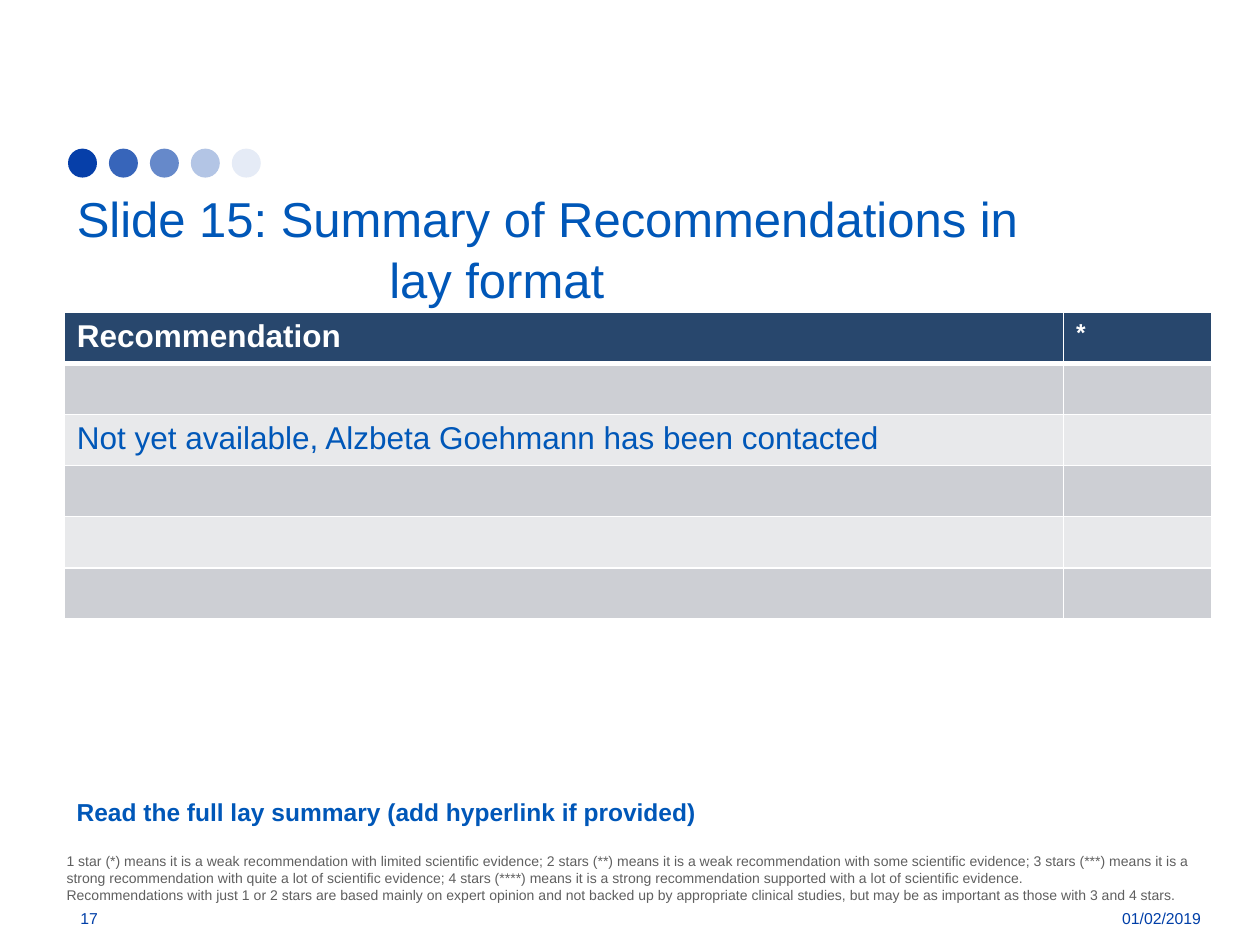
from dataclasses import dataclass

import lxml.etree
import pptx
import pptx.dml.color
import pptx.enum.shapes
import pptx.enum.text
import pptx.oxml.ns
import pptx.util

RGBColor = pptx.dml.color.RGBColor
Align = pptx.enum.text.PP_ALIGN
Anchor = pptx.enum.text.MSO_ANCHOR
qn = pptx.oxml.ns.qn

WHITE = RGBColor(0xFF, 0xFF, 0xFF)
BLUE = RGBColor(0x00, 0x57, 0xB8)
DEEP_BLUE = RGBColor(0x00, 0x3F, 0xA8)
DOT_BLUE = RGBColor(0x06, 0x3F, 0xA9)
NAVY = RGBColor(0x28, 0x47, 0x6D)
GREY = RGBColor(0x5F, 0x5F, 0x5F)
BANDS = (RGBColor(0xE8, 0xE9, 0xEB), RGBColor(0xCD, 0xCF, 0xD4))
FONT = "Arial"
UNIT = pptx.util.Inches(0.1)


@dataclass
class Label:
    box: tuple
    text: str
    size: int
    color: RGBColor
    bold: bool = False
    align: Align = Align.LEFT
    anchor: Anchor = Anchor.TOP


LABELS = (
    Label((5.4, 70.9, 9.6, 4), "17", 9, DEEP_BLUE, anchor=Anchor.MIDDLE),
    Label((82.9, 70.9, 13.4, 4), "01/02/2019", 9, DEEP_BLUE,
          align=Align.RIGHT, anchor=Anchor.MIDDLE),
    Label((4.3, 67.2, 91.4, 5),
          "1 star (*) means it is a weak recommendation with limited scientific evidence; "
          "2 stars (**) means it is a weak recommendation with some scientific evidence; "
          "3 stars (***) means it is a strong recommendation with quite a lot of scientific evidence; "
          "4 stars (****) means it is a strong recommendation supported with a lot of scientific evidence.\n"
          "Recommendations with just 1 or 2 stars are based mainly on expert opinion and not backed up "
          "by appropriate clinical studies, but may be as important as those with 3 and 4 stars.",
          8, GREY),
    Label((5.1, 62.8, 57.3, 3.4),
          "Read the full lay summary (add hyperlink if provided)", 14, BLUE, bold=True),
)
DOT_OPACITIES = (100, 80, 61, 30, 10)
COLUMNS = (79.3, 11.8)
ROWS = (("Recommendation", "*"), ("", ""),
        ("Not yet available, Alzbeta Goehmann has been contacted", ""),
        ("", ""), ("", ""), ("", ""))


def grid(*units: float) -> list:
    return [int(u * UNIT) for u in units]


def style(p, size: float, color: RGBColor, bold: bool = False) -> None:
    for r in p.runs:
        r.font.name = FONT
        r.font.size = pptx.util.Pt(size)
        r.font.bold = bold
        r.font.color.rgb = color


def add_dot(s, index: int, opacity: int) -> None:
    sp = s.shapes.add_shape(pptx.enum.shapes.MSO_SHAPE.OVAL,
                            *grid(5.4 + 3.25 * index, 11.8, 2.3, 2.3))
    sp.shadow.inherit = False
    sp.line.fill.background()
    sp.fill.solid()
    sp.fill.fore_color.rgb = DOT_BLUE
    color = sp._element.spPr.find(qn("a:solidFill"))[0]
    lxml.etree.SubElement(color, qn("a:alpha"), val=str(opacity * 1000))


def add_label(s, label: Label) -> None:
    tf = s.shapes.add_textbox(*grid(*label.box)).text_frame
    tf.word_wrap = True
    tf.vertical_anchor = label.anchor
    tf.text = label.text
    for p in tf.paragraphs:
        p.alignment = label.align
        style(p, label.size, label.color, label.bold)


def set_borders(cell, widths: dict) -> None:
    tc_pr = cell._tc.get_or_add_tcPr()
    for i, (side, width) in enumerate(widths.items()):
        ln = lxml.etree.Element(qn(f"a:ln{side}"), w=str(pptx.util.Pt(width)))
        fill = lxml.etree.SubElement(ln, qn("a:solidFill"))
        lxml.etree.SubElement(fill, qn("a:srgbClr"), val=str(WHITE))
        tc_pr.insert(i, ln)


def add_recommendations(s) -> None:
    table = s.shapes.add_table(len(ROWS), len(COLUMNS), *grid(5.1, 24.8, 91.1, 24.3)).table
    for column, width in zip(table.columns, COLUMNS):
        column.width = int(width * UNIT)
    for i, row in enumerate(ROWS):
        header = i == 0
        for j, text in enumerate(row):
            cell = table.cell(i, j)
            cell.fill.solid()
            cell.fill.fore_color.rgb = NAVY if header else BANDS[i % 2]
            set_borders(cell, {"L": 1, "R": 1, "T": 3 if i == 1 else 1, "B": 3 if header else 1})
            if text:
                cell.text_frame.text = text
                style(cell.text_frame.paragraphs[0], 14 if text == "*" else 18,
                      WHITE if header else BLUE, header)


def set_title(s) -> None:
    sp = s.shapes.title
    sp.left, sp.top, sp.width, sp.height = grid(5.1, 14.2, 91.1, 6.9)
    tf = sp.text_frame
    tf.word_wrap = True
    tf.auto_size = pptx.enum.text.MSO_AUTO_SIZE.NONE
    tf.vertical_anchor = Anchor.TOP
    tf.text = "Slide 15: Summary of Recommendations in\nlay format"
    for p in tf.paragraphs:
        p.alignment = Align.LEFT
        p.line_spacing = 1.05
        p.space_before = pptx.util.Pt(0)
        style(p, 28, BLUE)
    tf.paragraphs[1]._p.get_or_add_pPr().set("marL", str(int(24.8 * UNIT)))


def main() -> None:
    prs = pptx.Presentation()
    prs.slide_width, prs.slide_height = grid(100, 75)
    s = prs.slides.add_slide(prs.slide_layouts[5])
    for index, opacity in enumerate(DOT_OPACITIES):
        add_dot(s, index, opacity)
    add_recommendations(s)
    set_title(s)
    for label in LABELS:
        add_label(s, label)
    prs.save("out.pptx")


if __name__ == "__main__":
    main()
